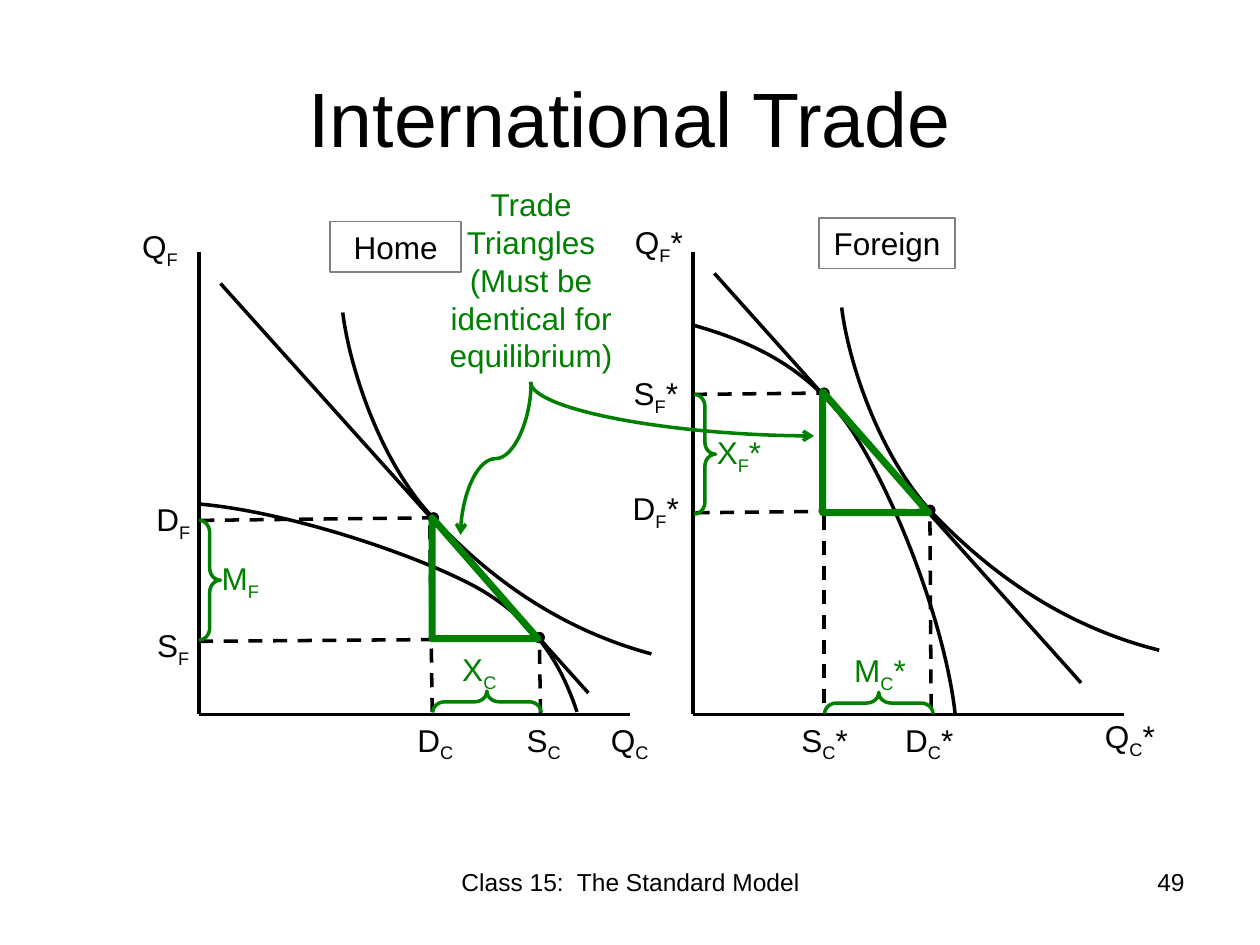
from lxml import etree
from pptx import Presentation
from pptx.dml.color import RGBColor
from pptx.enum.dml import MSO_LINE
from pptx.enum.shapes import MSO_CONNECTOR, MSO_SHAPE
from pptx.enum.text import MSO_ANCHOR, PP_ALIGN
from pptx.oxml.ns import qn
from pptx.util import Inches, Pt

BLACK = RGBColor(0, 0, 0)
GREEN = RGBColor(0, 0x80, 0)
GRAY = RGBColor(0x80, 0x80, 0x80)
LEFT, CENTER, RIGHT = PP_ALIGN.LEFT, PP_ALIGN.CENTER, PP_ALIGN.RIGHT
STRAIGHT, CURVE = MSO_CONNECTOR.STRAIGHT, MSO_CONNECTOR.CURVE
FONT = "Arial"
DOT, LABEL_W, LABEL_H = 0.08, 0.75, 0.4
AXIS_Y, AXIS_TOP, AXIS_LEN = 5.67, 2, 3.42
BRACE_W, RISE, RUN = 0.17, 0.95, 0.86

# Each panel: axis position, price line, dashed guides, tangency points,
# trade triangle corner, and curves as Bezier points
PANELS = [
    {"name": ("Home", 2.62, 1.76, 1.04), "axis": 1.58,
     "price": (1.75, 2.25, 4.67, 5.5),
     "guides": [(1.58, 5.09, 4.28, 5.07), (3.43, 5.65, 3.41, 4.08),
                (4.29, 5.66, 4.28, 5.02), (1.59, 4.13, 3.4, 4.11)],
     "dots": [(4.24, 5.02), (3.4, 4.07)],
     "triangle": (3.43, 4.11),
     "curves": [[(1.58, 4), (2.27, 4.06), (3.28, 4.39), (3.78, 4.66),
                 (4.28, 4.94), (4.47, 5.32), (4.58, 5.65)],
                [(5.17, 5.19), (4.39, 4.98), (3.82, 4.53), (3.41, 4.08),
                 (3, 3.63), (2.77, 2.89), (2.72, 2.48)]],
     "braces": [(1.58, 4.13, RISE, 0), (3.78, 5.14, RUN, 270)]},
    {"name": ("Foreign", 6.5, 1.73, 1.08), "axis": 5.5,
     "price": (5.67, 2.17, 8.58, 5.42),
     "guides": [(5.5, 3.13, 6.5, 3.12), (6.54, 5.58, 6.54, 3.16),
                (5.52, 4.07, 7.38, 4.05), (7.39, 5.62, 7.38, 4.04)],
     "dots": [(6.5, 3.08), (7.34, 4.01)],
     "triangle": (6.53, 3.11),
     "curves": [[(7.58, 5.66), (7.5, 4.95), (7.1, 3.92), (6.75, 3.4),
                 (6.4, 2.89), (5.92, 2.7), (5.5, 2.58)],
                [(9.2, 5.16), (8.4, 4.96), (7.82, 4.51), (7.39, 4.06),
                 (6.97, 3.6), (6.73, 2.86), (6.68, 2.44)]],
     "braces": [(5.51, 3.13, RISE, 0), (6.89, 5.15, RUN, 270)]},
]

# Letter, subscript and optional star; left, top; alignment; colour
LABELS = [
    ("QC", 4.75, 5.67, LEFT, BLACK), ("QF", 1.03, 1.75, LEFT, BLACK),
    ("QC*", 8.67, 5.64, LEFT, BLACK), ("QF*", 4.94, 1.72, LEFT, BLACK),
    ("DC", 3.08, 5.67, CENTER, BLACK), ("SC", 3.94, 5.67, CENTER, BLACK),
    ("DC*", 7, 5.67, CENTER, BLACK), ("SC*", 6.17, 5.67, CENTER, BLACK),
    ("DF", 1, 3.92, CENTER, BLACK), ("SF", 1, 4.92, CENTER, BLACK),
    ("SF*", 4.83, 2.92, CENTER, BLACK), ("DF*", 4.83, 3.83, CENTER, BLACK),
    ("MF", 1.66, 4.39, LEFT, GREEN), ("XF*", 5.59, 3.39, LEFT, GREEN),
    ("XC", 3.57, 5.11, LEFT, GREEN), ("MC*", 6.68, 5.12, LEFT, GREEN),
]

# Text, box, size, alignment, colour
TEXTS = [
    (["Trade Triangles", "(Must be identical for equilibrium)"],
     (3.38, 1.42, 1.67, 1.62), 18, CENTER, GREEN),
    (["Class 15:  The Standard Model"], (3.42, 6.83, 3.17, 0.52), 14, CENTER, BLACK),
    (["49"], (7.17, 6.83, 2.33, 0.52), 14, RIGHT, BLACK),
]

# Unrotated ends, rotation and preset of the arrows to the triangles
ARROWS = [((3.33, 3.36, 4.54, 3.92), 90, "curvedConnector3"),
          ((5.55, 2.12, 5.12, 4.37), 270, "curvedConnector2")]

prs = Presentation()
prs.slide_width, prs.slide_height = Inches(10), Inches(7.5)
s = prs.slides.add_slide(prs.slide_layouts[5])


def style(p, size, align, color):
    p.alignment = align
    p.font.name, p.font.size, p.font.color.rgb = FONT, Pt(size), color


def set_line(sp, color, width):
    sp.line.color.rgb, sp.line.width = color, Pt(width)


def connect(ends, color=BLACK, kind=STRAIGHT, dash=False):
    c = s.shapes.add_connector(kind, *map(Inches, ends))
    set_line(c, color, 2)
    if dash:
        c.line.dash_style = MSO_LINE.DASH
    etree.SubElement(c._element.spPr, qn("a:effectLst"))
    return c


def shape(kind, box, color, width, fill=None):
    sp = s.shapes.add_shape(kind, *map(Inches, box))
    sp.shadow.inherit = False
    set_line(sp, color, width)
    if fill is None:
        sp.fill.background()
    else:
        sp.fill.solid()
        sp.fill.fore_color.rgb = fill
    return sp


def curve(points):
    # The builder keeps whole numbers only, so the points go in as EMU
    start, *rest = [(Inches(x), Inches(y)) for x, y in points]
    builder = s.shapes.build_freeform(*start)
    builder.add_line_segments(rest, close=False)
    sp = builder.convert_to_shape()
    sp.shadow.inherit = False
    sp.fill.background()
    set_line(sp, BLACK, 2)
    # Join each three line points into one cubic segment
    segments = sp._element.xpath(".//a:lnTo")
    for i in range(0, len(segments), 3):
        first, *others = segments[i:i + 3]
        first.tag = qn("a:cubicBezTo")
        for seg in others:
            first.append(seg[0])
            seg.getparent().remove(seg)


def textbox(box):
    tf = s.shapes.add_textbox(*map(Inches, box)).text_frame
    tf.word_wrap = True
    return tf


def label(text, x, y, align, color):
    p = textbox((x, y, LABEL_W, LABEL_H)).paragraphs[0]
    style(p, 18, align, color)
    for i, char in enumerate(text):
        r = p.add_run()
        r.text = char
        if i == 1:
            r.font._element.set("baseline", "-25000")


# Title
title = s.shapes.title
title.left, title.top, title.width, title.height = map(Inches, (0.5, 0.3, 9, 1.25))
title.text_frame.text = "International Trade"
title.text_frame.vertical_anchor = MSO_ANCHOR.MIDDLE
style(title.text_frame.paragraphs[0], 44, CENTER, BLACK)

# Two diagrams
for panel in PANELS:
    x = panel["axis"]
    connect((x, AXIS_Y, x + AXIS_LEN, AXIS_Y))
    connect((x, AXIS_Y, x, AXIS_TOP))
    connect(panel["price"])
    for points in panel["curves"]:
        curve(points)
    for ends in panel["guides"]:
        connect(ends, dash=True)
    for dot in panel["dots"]:
        shape(MSO_SHAPE.OVAL, (*dot, DOT, DOT), BLACK, 0.75, BLACK)
    shape(MSO_SHAPE.RIGHT_TRIANGLE, (*panel["triangle"], 0.84, 0.96), GREEN, 4)
    for left, top, length, turn in panel["braces"]:
        brace = shape(MSO_SHAPE.LEFT_BRACE, (left, top, BRACE_W, length), GREEN, 2)
        brace.adjustments[0], brace.adjustments[1] = 0.56, 0.5
        brace.rotation = turn
        brace._element.spPr.xfrm.set("flipH", "1")
    name, left, top, width = panel["name"]
    tag = shape(MSO_SHAPE.RECTANGLE, (left, top, width, LABEL_H), GRAY, 0.75)
    tag.text_frame.text = name
    style(tag.text_frame.paragraphs[0], 18, CENTER, BLACK)

# Labels and other text
for item in LABELS:
    label(*item)
for lines, box, size, align, color in TEXTS:
    tf = textbox(box)
    tf.text = "\n".join(lines)
    for p in tf.paragraphs:
        style(p, size, align, color)

# Arrows to the trade triangles
for ends, turn, preset in ARROWS:
    c = connect(ends, GREEN, CURVE)
    spPr = c._element.spPr
    spPr.find(qn("a:xfrm")).set("rot", str(turn * 60000))
    spPr.find(qn("a:prstGeom")).set("prst", preset)
    etree.SubElement(c.line._get_or_add_ln(), qn("a:tailEnd"), type="arrow")

prs.save("out.pptx")
